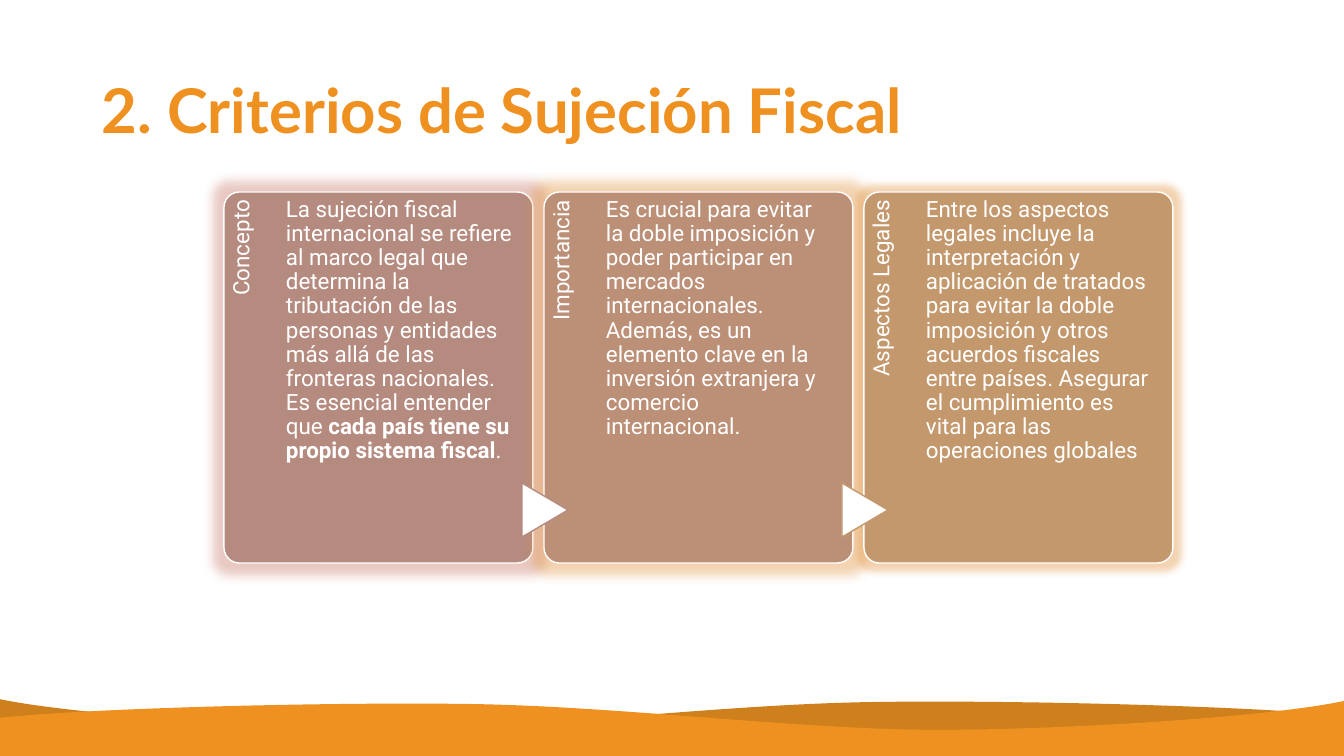
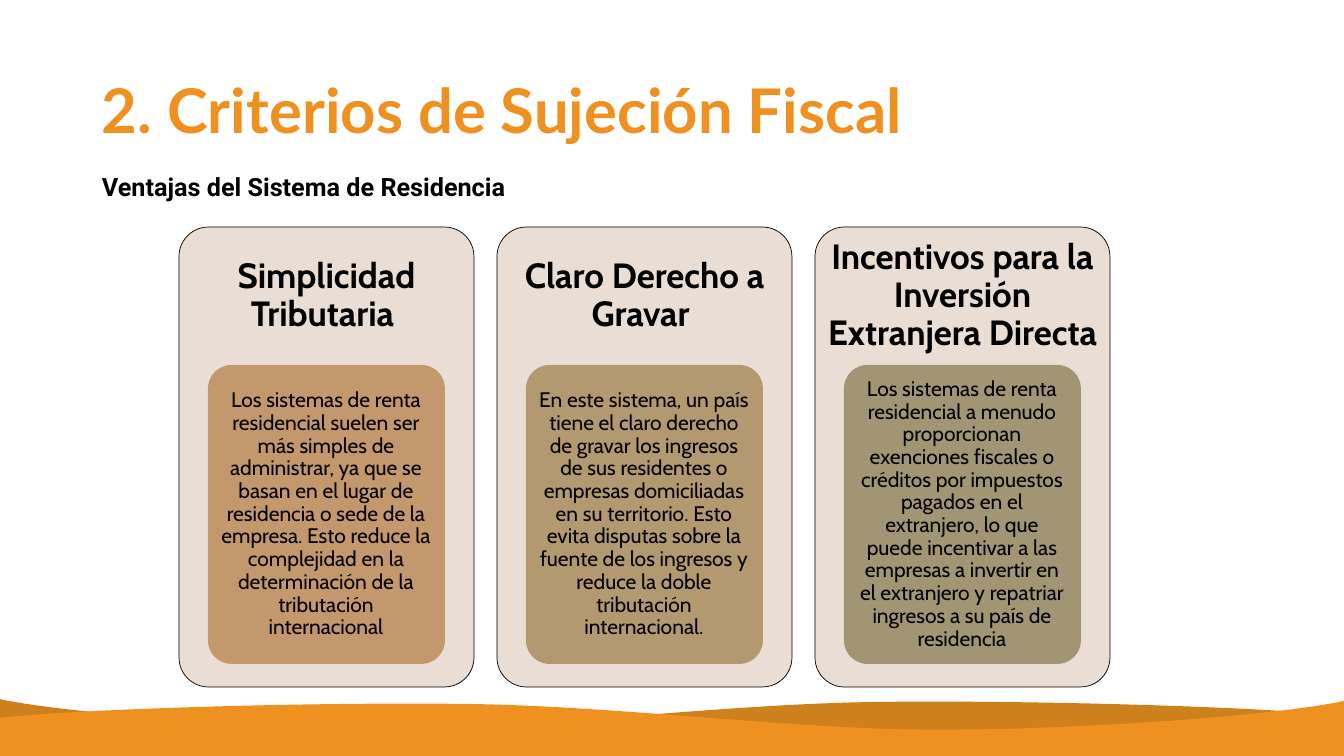
from lxml import etree
from pptx import Presentation
from pptx.dml.color import RGBColor
from pptx.enum.shapes import MSO_SHAPE
from pptx.enum.text import MSO_ANCHOR, MSO_AUTO_SIZE, PP_ALIGN
from pptx.oxml.ns import qn
from pptx.util import Pt

SCALE = 914400 / 100.8  # EMU in one px
SLIDE_WIDTH, SLIDE_HEIGHT = 1344, 756
TITLE_ONLY = 5
ROUNDED = MSO_SHAPE.ROUNDED_RECTANGLE
TRIANGLE = MSO_SHAPE.FLOWCHART_EXTRACT
TOP, MIDDLE = MSO_ANCHOR.TOP, MSO_ANCHOR.MIDDLE
LEFT, CENTER, RIGHT = PP_ALIGN.LEFT, PP_ALIGN.CENTER, PP_ALIGN.RIGHT

COLORS = {
    "orange": "EE9121",
    "dark_orange": "CE801C",
    "white": "FFFFFF",
    "black": "000000",
    "rose": "B58B80",
    "clay": "BC8F77",
    "sand": "C3986D",
    "khaki": "B39970",
    "olive": "A19574",
    "cream": "E9DDD4",
    "rose_glow": "C87868",
    "orange_glow": "E2933E",
}
TITLE = "2. Criterios de Sujeción Fiscal"

# Crest of the rear wave, right to left: a start, then Bézier triples
CREST = [
    (1344, 716),
    (1266, 707), (1034, 700), (877, 702),
    (721, 704), (547, 728), (401, 728),
    (255, 727), (69, 714), (-1, 699),
]

# heading, body spans (text, bold), fill, glow, glow radius, arrow outline
STEPS = [
    ("Concepto",
     [("La sujeción fiscal internacional se refiere al marco legal que determina "
       "la tributación de las personas y entidades más allá de las fronteras "
       "nacionales. Es esencial entender que ", False),
      ("cada país tiene su propio sistema fiscal", True), (".", False)],
     "rose", "rose_glow", 23, None),
    ("Importancia",
     [("Es crucial para evitar la doble imposición y poder participar en mercados "
       "internacionales. Además, es un elemento clave en la inversión extranjera "
       "y comercio internacional.", False)],
     "clay", "orange_glow", 23, "rose"),
    ("Aspectos Legales",
     [("Entre los aspectos legales incluye la interpretación y aplicación de "
       "tratados para evitar la doble imposición y otros acuerdos fiscales entre "
       "países. Asegurar el cumplimiento es vital para las operaciones globales",
       False)],
     "sand", "orange_glow", 14, "sand"),
]

ADVANTAGES = [
    ("Simplicidad Tributaria ",
     "Los sistemas de renta residencial suelen ser más simples de administrar, ya "
     "que se basan en el lugar de residencia o sede de la empresa. Esto reduce la "
     "complejidad en la determinación de la tributación internacional",
     "sand"),
    ("Claro Derecho a Gravar ",
     "En este sistema, un país tiene el claro derecho de gravar los ingresos de "
     "sus residentes o empresas domiciliadas en su territorio. Esto evita disputas "
     "sobre la fuente de los ingresos y reduce la doble tributación internacional.",
     "khaki"),
    ("Incentivos para la Inversión Extranjera Directa",
     "Los sistemas de renta residencial a menudo proporcionan exenciones fiscales "
     "o créditos por impuestos pagados en el extranjero, lo que puede incentivar a "
     "las empresas a invertir en el extranjero y repatriar ingresos a su país de "
     "residencia",
     "olive"),
]


def px(length):
    return round(length * SCALE)


def color(name):
    return RGBColor.from_string(COLORS[name])


def paint(shape, fill, line=None, width=1):
    shape.shadow.inherit = False
    shape.fill.solid()
    shape.fill.fore_color.rgb = color(fill)
    if line:
        shape.line.color.rgb = color(line)
        shape.line.width = Pt(width)
    else:
        shape.line.fill.background()


def add_box(slide, kind, box, fill, line=None, width=1, corner=None):
    shape = slide.shapes.add_shape(kind, *map(px, box))
    paint(shape, fill, line, width)
    if corner is not None:
        shape.adjustments[0] = corner
    return shape


def add_glow(shape, name, radius):
    effects = shape.element.spPr.find(qn("a:effectLst"))
    glow = etree.SubElement(effects, qn("a:glow"), rad=str(px(radius)))
    tint = etree.SubElement(glow, qn("a:srgbClr"), val=COLORS[name])
    etree.SubElement(tint, qn("a:alpha"), val="40000")


def write(shape, spans, font, size, ink, align=LEFT, anchor=TOP,
          insets=(10, 5, 10, 5), spacing=0.9):
    """Fill a shape with one paragraph of (text, bold) spans."""
    frame = shape.text_frame
    frame.word_wrap = True
    frame.auto_size = MSO_AUTO_SIZE.NONE
    frame.vertical_anchor = anchor
    (frame.margin_left, frame.margin_top,
     frame.margin_right, frame.margin_bottom) = map(px, insets)
    para = frame.paragraphs[0]
    para.alignment = align
    para.line_spacing = spacing
    for text, bold in spans:
        span = para.add_run()
        span.text = text
        span.font.name = font
        span.font.size = Pt(size)
        span.font.bold = bold
        span.font.color.rgb = color(ink)


def add_text(slide, box, spans, *style, **options):
    shape = slide.shapes.add_textbox(*map(px, box))
    write(shape, spans, *style, **options)
    return shape


def bend(shape, curves):
    """Turn the first segments of an outline, three at a time, into curves."""
    segments = list(shape.element.iter(qn("a:lnTo")))[:3 * curves]
    for start in range(0, len(segments), 3):
        triple = segments[start:start + 3]
        curve = etree.Element(qn("a:cubicBezTo"))
        triple[0].addprevious(curve)
        for segment in triple:
            curve.append(segment[0])
            segment.getparent().remove(segment)


def add_waves(layout, slide):
    """Draw the two footer waves on a slide and move them to its layout."""
    rear = CREST + [(-1, SLIDE_HEIGHT), (SLIDE_WIDTH, SLIDE_HEIGHT)]
    front = [(SLIDE_WIDTH - 1 - x, min(y + 2, SLIDE_HEIGHT)) for x, y in rear]
    for index, (points, fill) in enumerate([(rear, "dark_orange"), (front, "orange")]):
        builder = slide.shapes.build_freeform(*points[0], scale=SCALE)
        builder.add_line_segments(points[1:], close=True)
        wave = builder.convert_to_shape()
        bend(wave, len(CREST) // 3)
        paint(wave, fill)
        wave.element.nvSpPr.cNvPr.set("id", str(20 + index))
        layout.shapes.element.insert(2 + index, wave.element)


def prepare_layout(deck):
    """Keep only the title placeholder of the layout, and place it."""
    layout = deck.slide_layouts[TITLE_ONLY]
    title, *others = layout.placeholders
    for placeholder in others:
        layout.shapes.element.remove(placeholder.element)
    title.left, title.top, title.width, title.height = map(px, (92, 41, 1159, 146))
    return layout


def add_titled_slide(deck, layout):
    slide = deck.slides.add_slide(layout)
    write(slide.shapes.title, [(TITLE, True)], "Lato", 44, "orange", anchor=MIDDLE)
    return slide


def add_step(slide, left, top, heading, spans, fill, glow, radius, arrow_line):
    """A glowing card with a sideways heading, and an arrow from the card before."""
    width, height = 309, 371
    card = add_box(slide, ROUNDED, (left, top, width, height), fill, "white",
                   corner=0.05)
    add_glow(card, glow, radius)
    strip, length = 62, 304
    shift = (length - strip) / 2
    label = add_text(slide, (left - shift, top + shift, length, strip),
                     [(heading, False)], "Roboto", 16, "white",
                     align=RIGHT, insets=(0, 6, 8, 0))
    label.rotation = 270
    if arrow_line:
        arrow = add_box(slide, TRIANGLE, (left - 26, top + 295, 54, 46),
                        "white", arrow_line)
        arrow.rotation = 90
    add_text(slide, (left + strip, top, 229, height), spans,
             "Roboto", 16, "white", insets=(0, 6, 0, 0))


def add_advantage(slide, left, top, heading, body, fill):
    """A cream card with a heading above a coloured panel of text."""
    width, height, heading_height = 295, 460, 138
    add_box(slide, ROUNDED, (left, top, width, height), "cream", "black", 0.5,
            corner=0.1)
    add_text(slide, (left, top, width, heading_height), [(heading, True)],
             "Cabin", 25, "black", align=CENTER, anchor=MIDDLE,
             insets=(10, 10, 10, 10))
    panel = add_box(slide, ROUNDED, (left + 29, top + heading_height, 237, 299),
                    fill, corner=0.1)
    write(panel, [(body, False)], "Cabin", 15, "black",
          align=CENTER, anchor=MIDDLE, insets=(5, 3, 6, 3))


def build_steps_slide(slide):
    for index, step in enumerate(STEPS):
        add_step(slide, 224 + 320 * index, 192, *step)


def build_advantages_slide(slide):
    add_text(slide, (92, 166, 672, 40),
             [("Ventajas del Sistema de Residencia", True)],
             "Roboto", 18, "black", spacing=1.0)
    for index, advantage in enumerate(ADVANTAGES):
        add_advantage(slide, 179 + 318 * index, 227, *advantage)


def main():
    deck = Presentation()
    deck.slide_width, deck.slide_height = px(SLIDE_WIDTH), px(SLIDE_HEIGHT)
    layout = prepare_layout(deck)
    steps_slide = add_titled_slide(deck, layout)
    add_waves(layout, steps_slide)
    build_steps_slide(steps_slide)
    build_advantages_slide(add_titled_slide(deck, layout))
    deck.save("out.pptx")


if __name__ == "__main__":
    main()
